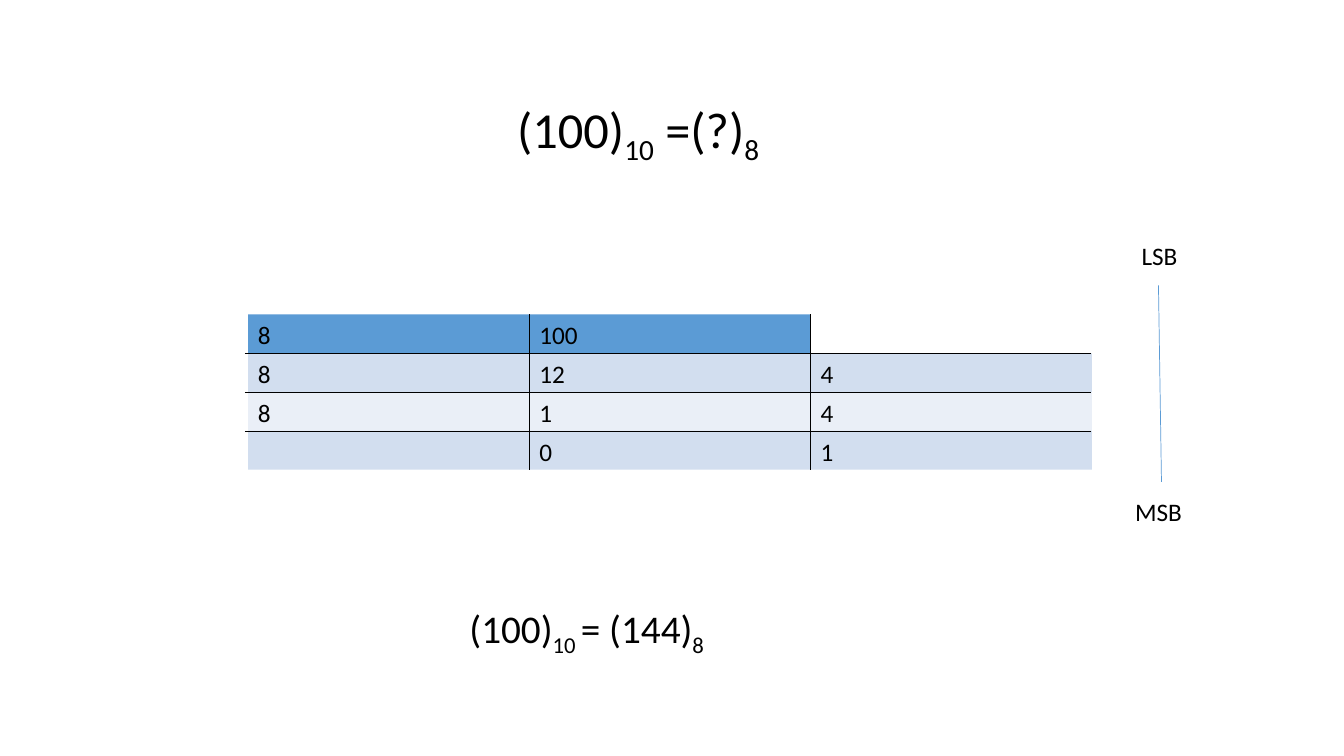
from pptx import Presentation, util as u
from pptx.dml.color import RGBColor
from pptx.enum import shapes, text
from pptx.oxml.ns import qn
from lxml import etree

COLORS = {"header": "5B9BD5", "band": "D2DEEF", "light": "EAEFF7", "ink": "000000"}
FONT = "Calibri"
WIDTH, HEIGHT = 13.33, 7.5
ROWS = [
    ("header", ["8", "100"]),
    ("band", ["8", "12", "4"]),
    ("light", ["8", "1", "4"]),
    ("band", ["", "0", "1"]),
]
COLUMNS = 3


def inches(*lengths):
    return [u.Inches(length) for length in lengths]


def write(shape, *runs, size=18, align=text.PP_ALIGN.LEFT, anchor=text.MSO_ANCHOR.TOP, right=0.1):
    frame = shape.text_frame
    frame.word_wrap = True
    frame.vertical_anchor = anchor
    frame.margin_right = u.Inches(right)
    paragraph = frame.paragraphs[0]
    paragraph.alignment = align
    for index, words in enumerate(runs):
        run = paragraph.add_run()
        run.text = words
        run.font.name = FONT
        run.font.size = u.Pt(size)
        run.font.color.rgb = RGBColor.from_string(COLORS["ink"])
        if index % 2:
            run.font._element.set("baseline", "-25000")


def add_text(slide, box, *runs, **style):
    write(slide.shapes.add_textbox(*inches(*box)), *runs, **style)


def add_line(slide, start, end, color="ink"):
    line = slide.shapes.add_connector(shapes.MSO_CONNECTOR.STRAIGHT, *inches(*start, *end))
    line.line.color.rgb = RGBColor.from_string(COLORS[color])
    line.line.width = u.Pt(0.5)
    etree.SubElement(line._element.spPr, qn("a:effectLst"))


def add_cell(slide, box, color, words):
    cell = slide.shapes.add_shape(shapes.MSO_SHAPE.RECTANGLE, *inches(*box))
    cell.shadow.inherit = False
    cell.fill.solid()
    cell.fill.fore_color.rgb = RGBColor.from_string(COLORS[color])
    cell.line.fill.background()
    if words:
        write(cell, words)


def add_division_grid(slide, box):
    left, top, width, height = box
    column, row = width / COLUMNS, height / len(ROWS)
    for r, (color, values) in enumerate(ROWS):
        for c, value in enumerate(values):
            add_cell(slide, (left + c * column, top + r * row, column, row), color, value)
    for c in range(1, COLUMNS):
        x = left + c * column
        add_line(slide, (x, top), (x, top + height))
    for r in range(1, len(ROWS)):
        y = top + r * row
        add_line(slide, (left - 0.03, y), (left + width - 0.01, y))


def add_bit_order(slide, box):
    left, top, width, height = box
    label = 0.41
    add_text(slide, (left, top, 0.84, label), "LSB", align=text.PP_ALIGN.CENTER)
    add_line(slide, (left + 0.41, top + 0.5), (left + 0.44, top + 2.45), "header")
    add_text(slide, (left + 0.08, top + height - label, width - 0.08, label), "MSB")


def main():
    presentation = Presentation()
    presentation.slide_width, presentation.slide_height = inches(WIDTH, HEIGHT)
    slide = presentation.slides.add_slide(presentation.slide_layouts[6])
    add_division_grid(slide, (2.46, 3.12, 8.37, 1.54))
    add_text(slide, (5.03, 0.92, 5.29, 0.71), "(100)", "10", " =(?)", "8", size=36)
    add_bit_order(slide, (11.08, 2.33, 0.89, 2.95))
    add_text(slide, (3.87, 5.95, 4.16, 0.88), "(100)", "10 ", "= (144)", "8",
             size=28, align=text.PP_ALIGN.CENTER, right=0.36)
    presentation.save("out.pptx")


if __name__ == "__main__":
    main()
